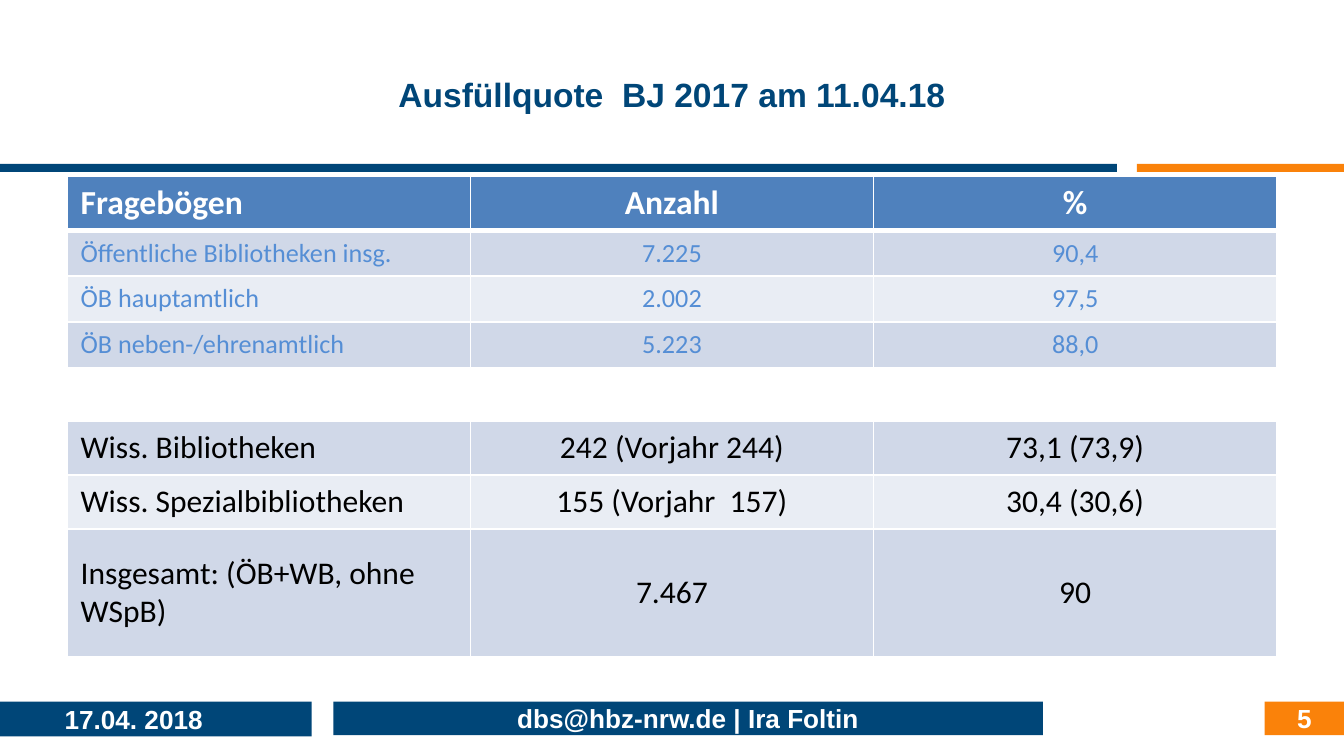
from lxml.etree import fromstring
from pptx import Presentation
from pptx.dml.color import RGBColor
from pptx.enum.shapes import MSO_SHAPE as Shape
from pptx.enum.text import MSO_ANCHOR as Anchor, PP_ALIGN as Align
from pptx.util import Inches, Pt

# Content
TITLE = "Ausfüllquote  BJ 2017 am 11.04.18"
HEAD, PUBLIC, GAP, OTHER = "head", "public", "gap", "other"
ROWS = [  # kind, height, fill, texts
    (HEAD, 0.39, "4F81BD", ("Fragebögen", "Anzahl", "%")),
    (PUBLIC, 0.34, "D0D8E8", ("Öffentliche Bibliotheken insg.", "7.225", "90,4")),
    (PUBLIC, 0.34, "E9EDF4", ("ÖB hauptamtlich", "2.002", "97,5")),
    (PUBLIC, 0.34, "D0D8E8", ("ÖB neben-/ehrenamtlich", "5.223", "88,0")),
    (GAP, 0.4, "FFFFFF", ("", "", "")),
    (OTHER, 0.4, "D0D8E8", ("Wiss. Bibliotheken", "242 (Vorjahr 244)", "73,1 (73,9)")),
    (OTHER, 0.4, "E9EDF4", ("Wiss. Spezialbibliotheken", "155 (Vorjahr  157)", "30,4 (30,6)")),
    (OTHER, 0.95, "D0D8E8", ("Insgesamt: (ÖB+WB, ohne WSpB)", "7.467", "90")),
]
STYLES = {  # size, colour, bold
    HEAD: (18, "FFFFFF", True),
    PUBLIC: (14, "558ED5", False),
    GAP: (14, "000000", False),
    OTHER: (16.9, "000000", False),
}
NAVY, ORANGE, WHITE = "004678", "FA820A", "FFFFFF"
RULES = [((8.46, 1.22, 1.54, 0.06), ORANGE), ((0, 1.22, 8.31, 0.06), NAVY)]
FOOTER = [
    ((-0.01, 5.22, 2.33, 0.26), NAVY, "17.04. 2018", Align.LEFT, 0.49),
    ((2.48, 5.22, 5.28, 0.25), NAVY, "dbs@hbz-nrw.de | Ira Foltin", Align.CENTER, 0.1),
    ((9.41, 5.22, 0.59, 0.25), ORANGE, "5", Align.CENTER, 0.1),
]
NS = "http://schemas.openxmlformats.org/drawingml/2006/main"


def paint(target, color):
    target.solid()
    target.fore_color.rgb = RGBColor.from_string(color)


def write(frame, text, face, size, color, bold, align):
    para = frame.paragraphs[0]
    para.alignment = align
    run = para.add_run()
    run.text = text
    run.font.name, run.font.size, run.font.bold = face, Pt(size), bold
    run.font.color.rgb = RGBColor.from_string(color)


def bar(slide, box, color):
    shape = slide.shapes.add_shape(Shape.RECTANGLE, *map(Inches, box))
    shape.shadow.inherit = False
    paint(shape.fill, color)
    shape.line.fill.background()
    return shape


def border(cell, top, bottom):
    props = cell._tc.get_or_add_tcPr()
    for i, (side, width) in enumerate(zip("LRTB", (1, 1, top, bottom))):
        props.insert(i, fromstring(
            f'<a:ln{side} xmlns:a="{NS}" w="{Pt(width)}"><a:solidFill>'
            f'<a:srgbClr val="{WHITE}"/></a:solidFill></a:ln{side}>'))


# 16:9 page
deck = Presentation()
deck.slide_width = Inches(10)
deck.slide_height = deck.slide_width * 9 // 16
slide = deck.slides.add_slide(deck.slide_layouts[5])

# Rules and title
for box, color in RULES:
    bar(slide, box, color)
title = slide.shapes.title
title.left, title.top, title.width, title.height = map(Inches, (0.5, 0.23, 9, 0.94))
title.text_frame.vertical_anchor = Anchor.MIDDLE
write(title.text_frame, TITLE, "Arial", 18, NAVY, True, Align.CENTER)

# Table
total = sum(row[1] for row in ROWS)
table = slide.shapes.add_table(
    len(ROWS), 3, *map(Inches, (0.5, 1.31, 9, total))).table
for r, (kind, height, fill, texts) in enumerate(ROWS):
    table.rows[r].height = Inches(height)
    for c, text in enumerate(texts):
        cell = table.cell(r, c)
        cell.vertical_anchor = Anchor.TOP if kind == HEAD else Anchor.MIDDLE
        paint(cell.fill, fill)
        border(cell, 3 if r == 1 else 1, 3 if r == 0 else 1)
        write(cell.text_frame, text, "Calibri", *STYLES[kind],
              Align.CENTER if c else Align.LEFT)

# Footer
for box, color, text, align, inset in FOOTER:
    frame = bar(slide, box, color).text_frame
    frame.word_wrap = True
    frame.vertical_anchor = Anchor.MIDDLE
    frame.margin_left = Inches(inset)
    write(frame, text, "Arial", 14, WHITE, True, align)

deck.save("out.pptx")
